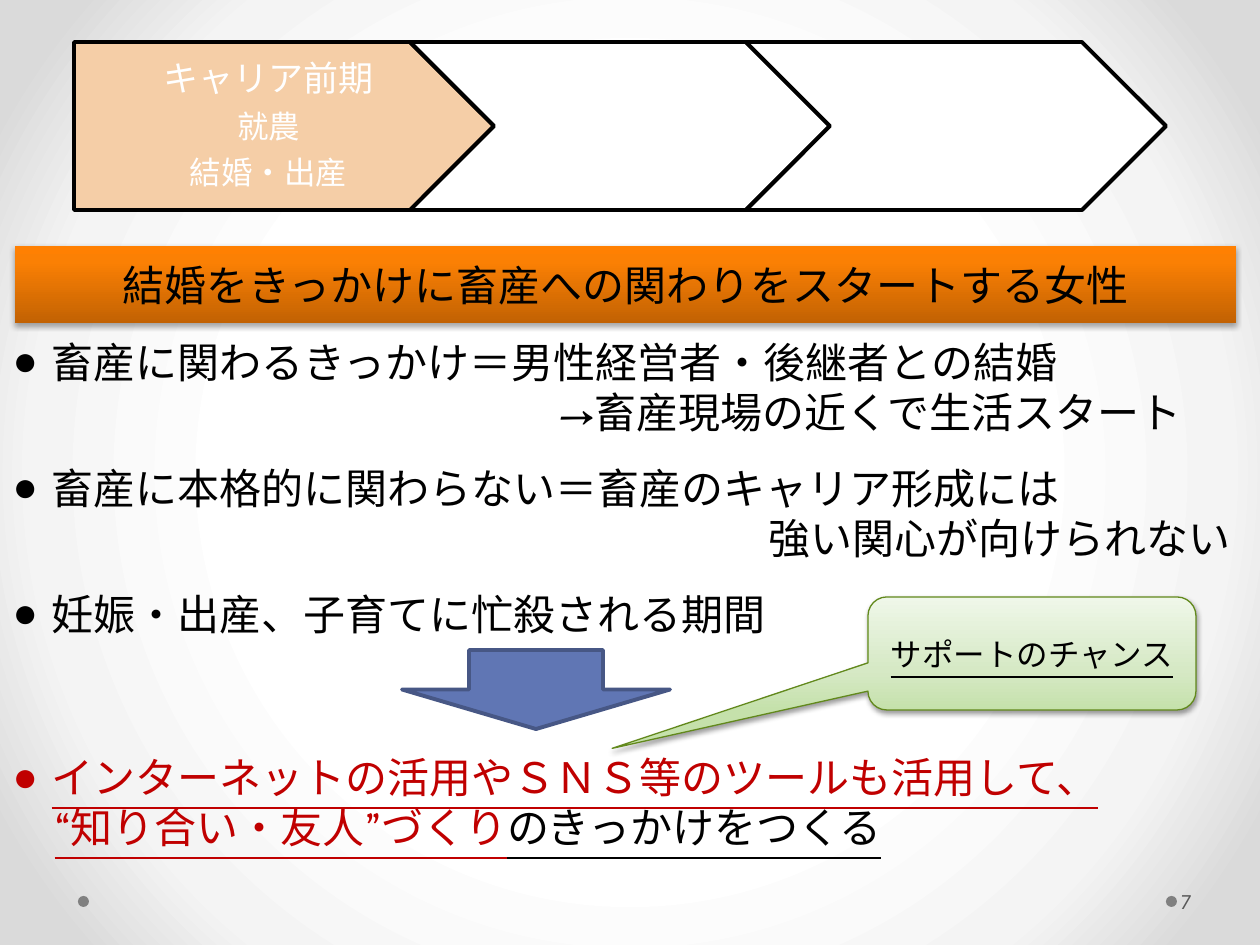
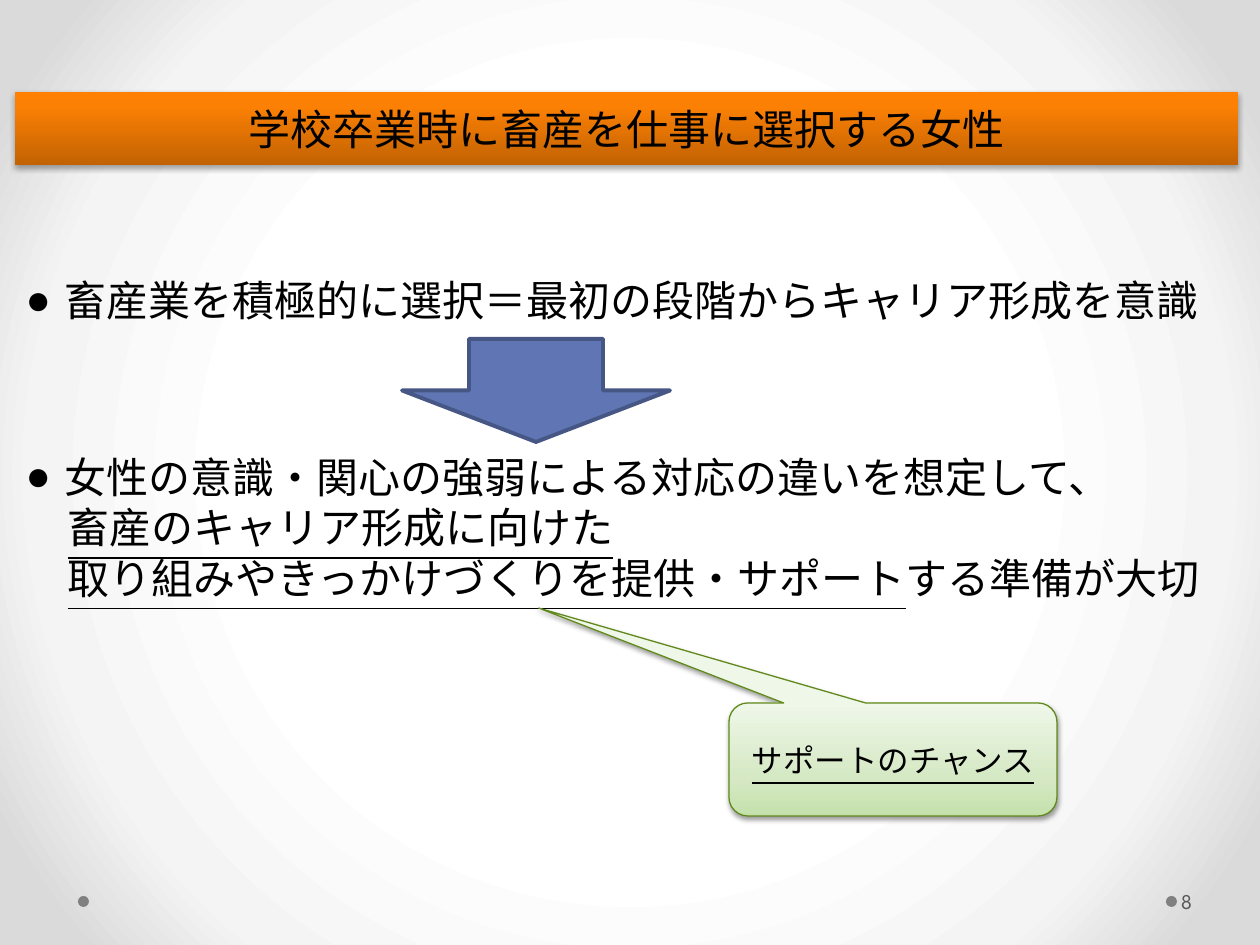
from lxml import etree
from pptx import Presentation
from pptx.dml.color import RGBColor
from pptx.enum.shapes import MSO_SHAPE as SHAPE
from pptx.enum.text import MSO_ANCHOR as ANCHOR, MSO_AUTO_SIZE as AUTO, PP_ALIGN as ALIGN
from pptx.oxml.ns import qn
from pptx.util import Pt

EMU_PER_PX = 914400 / 126
JP_FONT = "Vollkorn"
NUM_FONT = "League Spartan"
BULLET_INDENT = 39
CHAR = 42

COLORS = {
    "black": "000000", "white": "FFFFFF", "red": "C00000",
    "stage": "F5CEA7", "dot": "808080", "number": "595959",
    "arrow": "6076B4", "arrow_line": "475785", "callout_line": "62891C",
}
BACKGROUND = [(50, "FFFFFF"), (76, "F4F4F4"), (92, "DADADA")]
BAND = [(0, "C26203"), (80, "FB8004"), (100, "FF8002")]
CALLOUT = [(0, "C5E1AB"), (35, "D6E9C5"), (100, "EFF7E9")]


def px(n):
    return round(n * EMU_PER_PX)


def box(*at):
    return [px(n) for n in at]


def rgb(name):
    return RGBColor.from_string(COLORS[name])


def sub(parent, tag, **attrs):
    el = etree.SubElement(parent, qn(tag))
    for key, value in attrs.items():
        el.set(key, str(value))
    return el


def set_gradient(root, fill, stops, circle=False):
    fill.gradient()
    grad = root.find(".//" + qn("a:gradFill"))
    for child in list(grad):
        grad.remove(child)
    gs_lst = sub(grad, "a:gsLst")
    for pos, color in stops:
        sub(sub(gs_lst, "a:gs", pos=pos * 1000), "a:srgbClr", val=color)
    if circle:
        path = sub(grad, "a:path", path="circle")
        sub(path, "a:fillToRect", l=50000, t=50000, r=50000, b=50000)
    else:
        sub(grad, "a:lin", ang=270 * 60000, scaled=0)


def set_shadow(sp, alpha, blur, dist):
    sp.shadow.inherit = False
    effects = sp._element.spPr.find(qn("a:effectLst"))
    shadow = sub(effects, "a:outerShdw", blurRad=Pt(blur), dist=Pt(dist),
                 dir=90 * 60000, rotWithShape=0)
    color = sub(shadow, "a:srgbClr", val=COLORS["black"])
    sub(color, "a:alpha", val=alpha * 1000)


def format_run(r, size, color="black", underline=False, font=JP_FONT):
    r.font.size = Pt(size)
    r.font.color.rgb = rgb(color)
    r.font.underline = underline
    r.font.name = font
    sub(r._r.get_or_add_rPr(), "a:ea", typeface=font)


def set_text(sp, text, sizes, align=ALIGN.CENTER, **style):
    tf = sp.text_frame
    tf.text = text
    tf.word_wrap = True
    tf.auto_size = AUTO.NONE
    tf.vertical_anchor = ANCHOR.MIDDLE
    for p, size in zip(tf.paragraphs, sizes):
        p.alignment = align
        format_run(p.runs[0], size, **style)
    return tf


def add_shape(shapes, kind, at, fill=None, line=None, width=2.25):
    sp = shapes.add_shape(kind, *box(*at))
    sp.shadow.inherit = False
    if fill:
        sp.fill.solid()
        sp.fill.fore_color.rgb = rgb(fill)
    if line:
        sp.line.color.rgb = rgb(line)
        sp.line.width = Pt(width)
    else:
        sp.line.fill.background()
    return sp


def place(sp, at):
    sp.left, sp.top, sp.width, sp.height = box(*at)


def add_title_band(s, text, at):
    title = s.shapes.title
    place(title, at)
    geom = etree.Element(qn("a:prstGeom"), prst="roundRect")
    sub(sub(geom, "a:avLst"), "a:gd", name="adj", fmla="val 50000")
    title._element.spPr.find(qn("a:xfrm")).addnext(geom)
    set_gradient(title._element, title.fill, BAND)
    set_shadow(title, 35, 3.1, 1.8)
    set_text(title, text, [24])


def bullet(text, before=0, **style):
    return BULLET_INDENT, True, before, [(text, style)]


def continuation(chars, *runs):
    return chars * CHAR, False, 0, runs


def add_list(s, at, lines):
    body = s.placeholders[1]
    place(body, at)
    tf = body.text_frame
    tf.word_wrap = True
    tf.auto_size = AUTO.NONE
    for i, (margin, bulleted, before, runs) in enumerate(lines):
        p = tf.paragraphs[0] if i == 0 else tf.add_paragraph()
        p.space_before = Pt(before)
        pPr = p._p.get_or_add_pPr()
        pPr.set("marL", str(px(margin)))
        pPr.set("indent", str(px(-margin if bulleted else 0)))
        if bulleted:
            sub(pPr, "a:buChar", char="●")
        else:
            sub(pPr, "a:buNone")
        for text, style in runs:
            r = p.add_run()
            r.text = text
            format_run(r, 24, **style)


def add_stages(s):
    group = s.shapes.add_group_shape()
    for i in range(3):
        kind = SHAPE.CHEVRON if i else SHAPE.PENTAGON
        sp = add_shape(group.shapes, kind, (74 + i * 336, 42, 420, 168),
                       "white" if i else "stage", "black")
        if i == 0:
            tf = set_text(sp, "キャリア前期\n就農\n結婚・出産", [20, 18, 18], color="white")
            tf.margin_left, tf.margin_right = px(15), px(4)
            tf.margin_top = tf.margin_bottom = px(8)
            for p in tf.paragraphs:
                p.line_spacing = 0.9
                p.space_after = Pt(7)


def add_down_arrow(s, top, height):
    add_shape(s.shapes, SHAPE.DOWN_ARROW, (402, top, 268, height), "arrow", "arrow_line")


def add_callout(s, left, top, tip):
    sp = add_shape(s.shapes, SHAPE.ROUNDED_RECTANGULAR_CALLOUT, (left, top, 328, 113),
                   line="callout_line", width=0.75)
    sp.adjustments[0], sp.adjustments[1] = tip
    set_gradient(sp._element, sp.fill, CALLOUT)
    set_shadow(sp, 38, 3.1, 1.6)
    set_text(sp, "サポートのチャンス", [18], underline=True)


def add_footer(s, number):
    for left in (1166, 78):
        add_shape(s.shapes, SHAPE.OVAL, (left, 896, 11, 11), "dot")
    tb = s.shapes.add_textbox(*box(1177, 876, 77, 50))
    tf = set_text(tb, str(number), [12], ALIGN.LEFT, color="number", font=NUM_FONT)
    tf.margin_left = px(4)
    tf.margin_right = px(6)


def new_slide(prs, number, title, band_at):
    s = prs.slides.add_slide(prs.slide_layouts[1])
    add_title_band(s, title, band_at)
    add_footer(s, number)
    return s


def add_marriage_slide(prs):
    s = new_slide(prs, 7, "結婚をきっかけに畜産への関わりをスタートする女性", (15, 246, 1221, 77))
    add_stages(s)
    key = {"color": "red", "underline": True}
    add_list(s, (0, 330, 1260, 534), [
        bullet("畜産に関わるきっかけ＝男性経営者・後継者との結婚"),
        continuation(13, ("→畜産現場の近くで生活スタート", {})),
        bullet("畜産に本格的に関わらない＝畜産のキャリア形成には", 14.4),
        continuation(18, ("強い関心が向けられない", {})),
        bullet("妊娠・出産、子育てに忙殺される期間", 14.4),
        bullet("インターネットの活用やＳＮＳ等のツールも活用して、", 64.4, **key),
        continuation(1, ("“知り合い・友人”づくり", key),
                     ("のきっかけをつくる", {"underline": True})),
    ])
    add_down_arrow(s, 650, 79)
    add_callout(s, 868, 597, (-1.28, 0.84))


def add_graduation_slide(prs):
    s = new_slide(prs, 8, "学校卒業時に畜産を仕事に選択する女性", (15, 92, 1223, 73))
    key = {"underline": True}
    add_list(s, (13, 268, 1225, 344), [
        bullet("畜産業を積極的に選択＝最初の段階からキャリア形成を意識"),
        bullet("女性の意識・関心の強弱による対応の違いを想定して、", 72.3),
        continuation(1, ("畜産のキャリア形成に向けた", key)),
        continuation(1, ("取り組みやきっかけづくりを提供・サポート", key),
                     ("する準備が大切", {})),
    ])
    add_down_arrow(s, 339, 103)
    add_callout(s, 729, 703, (-1.08, -1.34))


def main():
    prs = Presentation()
    prs.slide_width, prs.slide_height = box(1260, 945)
    master = prs.slide_master
    set_gradient(master.element, master.background.fill, BACKGROUND, circle=True)
    add_marriage_slide(prs)
    add_graduation_slide(prs)
    prs.save("out.pptx")


if __name__ == "__main__":
    main()
